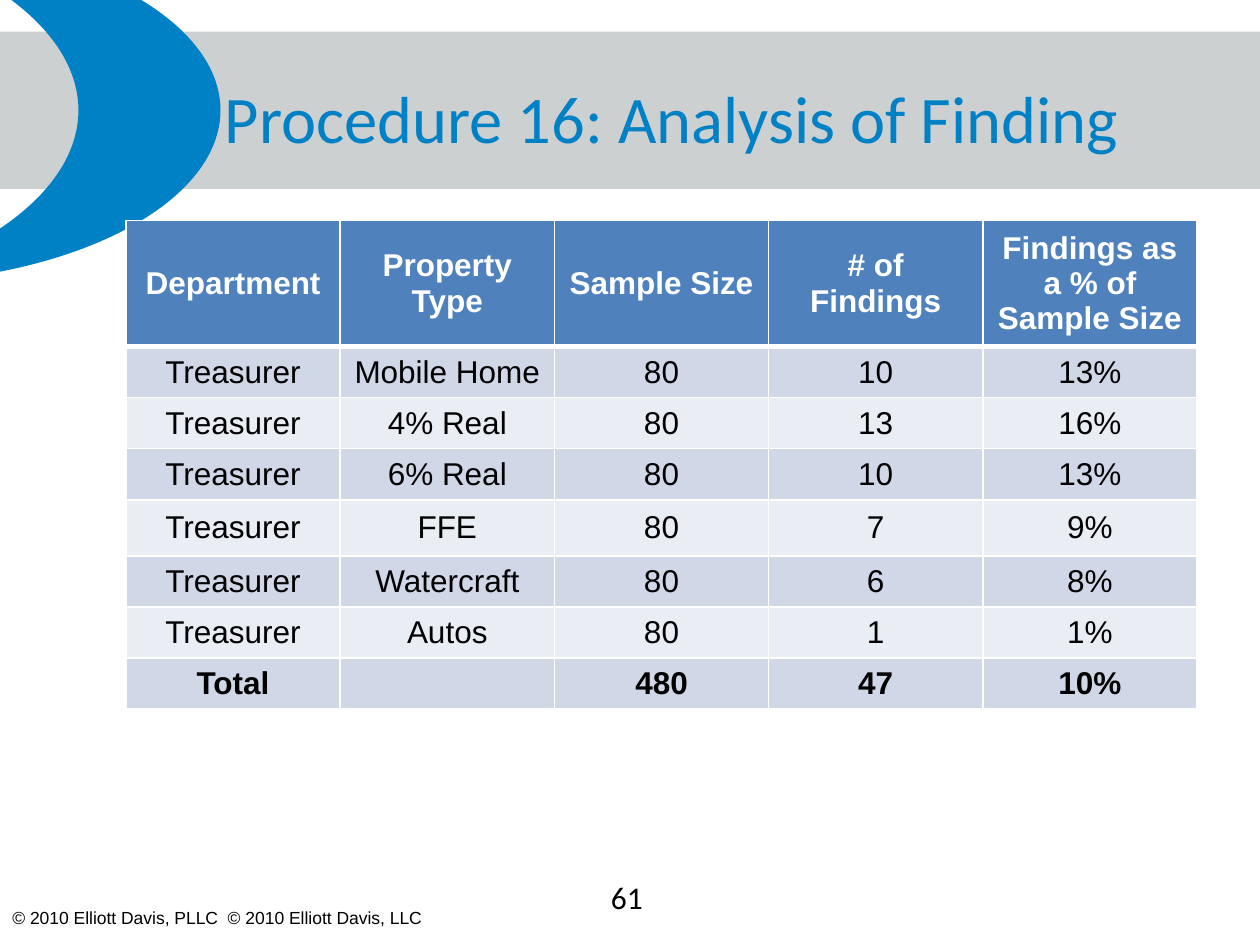
from lxml import etree
from pptx import Presentation
from pptx.dml.color import RGBColor
from pptx.enum.shapes import MSO_SHAPE
from pptx.enum.text import MSO_ANCHOR, PP_ALIGN
from pptx.oxml.ns import qn
from pptx.util import Pt

RECTANGLE, MOON = MSO_SHAPE.RECTANGLE, MSO_SHAPE.MOON
TOP, MIDDLE = MSO_ANCHOR.TOP, MSO_ANCHOR.MIDDLE
LEFT, CENTER = PP_ALIGN.LEFT, PP_ALIGN.CENTER
BLUE = RGBColor(0x00, 0x81, 0xC6)
GRAY = RGBColor(0xC8, 0xCB, 0xCB)
HEADER_BLUE = RGBColor(0x4F, 0x81, 0xBD)
BAND_DARK = RGBColor(0xD0, 0xD8, 0xE8)
BAND_LIGHT = RGBColor(0xE9, 0xED, 0xF4)
WHITE = RGBColor(0xFF, 0xFF, 0xFF)
BLACK = RGBColor(0x00, 0x00, 0x00)

TITLE = "Procedure 16: Analysis of Finding"
COPYRIGHT = "© 2010 Elliott Davis, PLLC  © 2010 Elliott Davis, LLC"
PAGE_NUMBER = "61"
HEADER = ("Department", "Property Type", "Sample Size", "# of Findings",
          "Findings as a % of Sample Size")
FINDINGS = [
    ("Mobile Home", "80", "10", "13%"),
    ("4% Real", "80", "13", "16%"),
    ("6% Real", "80", "10", "13%"),
    ("FFE", "80", "7", "9%"),
    ("Watercraft", "80", "6", "8%"),
    ("Autos", "80", "1", "1%"),
]
TOTAL = ("Total", "", "480", "47", "10%")
ROWS = [HEADER, *(("Treasurer", *finding) for finding in FINDINGS), TOTAL]
COLUMN_WIDTH, ROW_HEIGHT = 122.4, 29.2
SPECIAL_HEIGHTS = {0: 67.5, 4: 32}


def write(frame, text, size=18, font="Arial", color=BLACK, bold=False, align=LEFT):
    para = frame.paragraphs[0]
    para.alignment = align
    if not text:
        return
    span = para.add_run()
    span.text = text
    span.font.size = Pt(size)
    span.font.name = font
    span.font.color.rgb = color
    span.font.bold = bold


def add_text(page, text, left, top, width, height, anchor=TOP, **style):
    box = page.shapes.add_textbox(Pt(left), Pt(top), Pt(width), Pt(height))
    box.text_frame.word_wrap = True
    box.text_frame.vertical_anchor = anchor
    write(box.text_frame, text, **style)


def add_shape(page, kind, left, top, width, height, color):
    shape = page.shapes.add_shape(kind, Pt(left), Pt(top), Pt(width), Pt(height))
    shape.shadow.inherit = False
    shape.fill.solid()
    shape.fill.fore_color.rgb = color
    shape.line.fill.background()
    return shape


def set_borders(cell, **widths):
    properties = cell._tc.get_or_add_tcPr()
    for side in "LRTB":
        line = etree.SubElement(properties, qn(f"a:ln{side}"), w=str(Pt(widths.get(side, 1))))
        fill = etree.SubElement(line, qn("a:solidFill"))
        etree.SubElement(fill, qn("a:srgbClr"), val=str(WHITE))


def add_findings_table(page):
    heights = [SPECIAL_HEIGHTS.get(i, ROW_HEIGHT) for i in range(len(ROWS))]
    table = page.shapes.add_table(len(ROWS), len(HEADER), Pt(72), Pt(126),
                                  Pt(COLUMN_WIDTH * len(HEADER)), Pt(sum(heights))).table
    for column in table.columns:
        column.width = Pt(COLUMN_WIDTH)
    for i, (values, height) in enumerate(zip(ROWS, heights)):
        table.rows[i].height = Pt(height)
        is_header = i == 0
        band = HEADER_BLUE if is_header else BAND_DARK if i % 2 else BAND_LIGHT
        for j, value in enumerate(values):
            cell = table.cell(i, j)
            set_borders(cell, T=3 if i == 1 else 1, B=3 if is_header else 1)
            cell.fill.solid()
            cell.fill.fore_color.rgb = band
            cell.vertical_anchor = MIDDLE
            write(cell.text_frame, value, color=WHITE if is_header else BLACK,
                  bold=is_header or values is TOTAL, align=CENTER)


def main():
    deck = Presentation()
    deck.slide_width, deck.slide_height = Pt(720), Pt(540)
    page = deck.slides.add_slide(deck.slide_layouts[6])

    banner = add_shape(page, RECTANGLE, 0, 18, 720, 90, GRAY)
    banner_color = banner.fill._xPr.find(qn("a:solidFill"))[0]
    etree.SubElement(banner_color, qn("a:alpha"), val="90000")
    moon = add_shape(page, MOON, -72, -36, 198, 198, BLUE)
    moon.rotation = 180
    moon.adjustments[0] = 0.41

    add_text(page, COPYRIGHT, 0, 514.8, 258, 19.4, size=10)
    add_text(page, TITLE, 60, 21.6, 648, 90, anchor=MIDDLE, size=38,
             font="Calibri", color=BLUE, align=CENTER)
    add_findings_table(page)
    add_text(page, PAGE_NUMBER, 342, 498, 36, 29, font="Calibri")
    deck.save("out.pptx")


if __name__ == "__main__":
    main()
